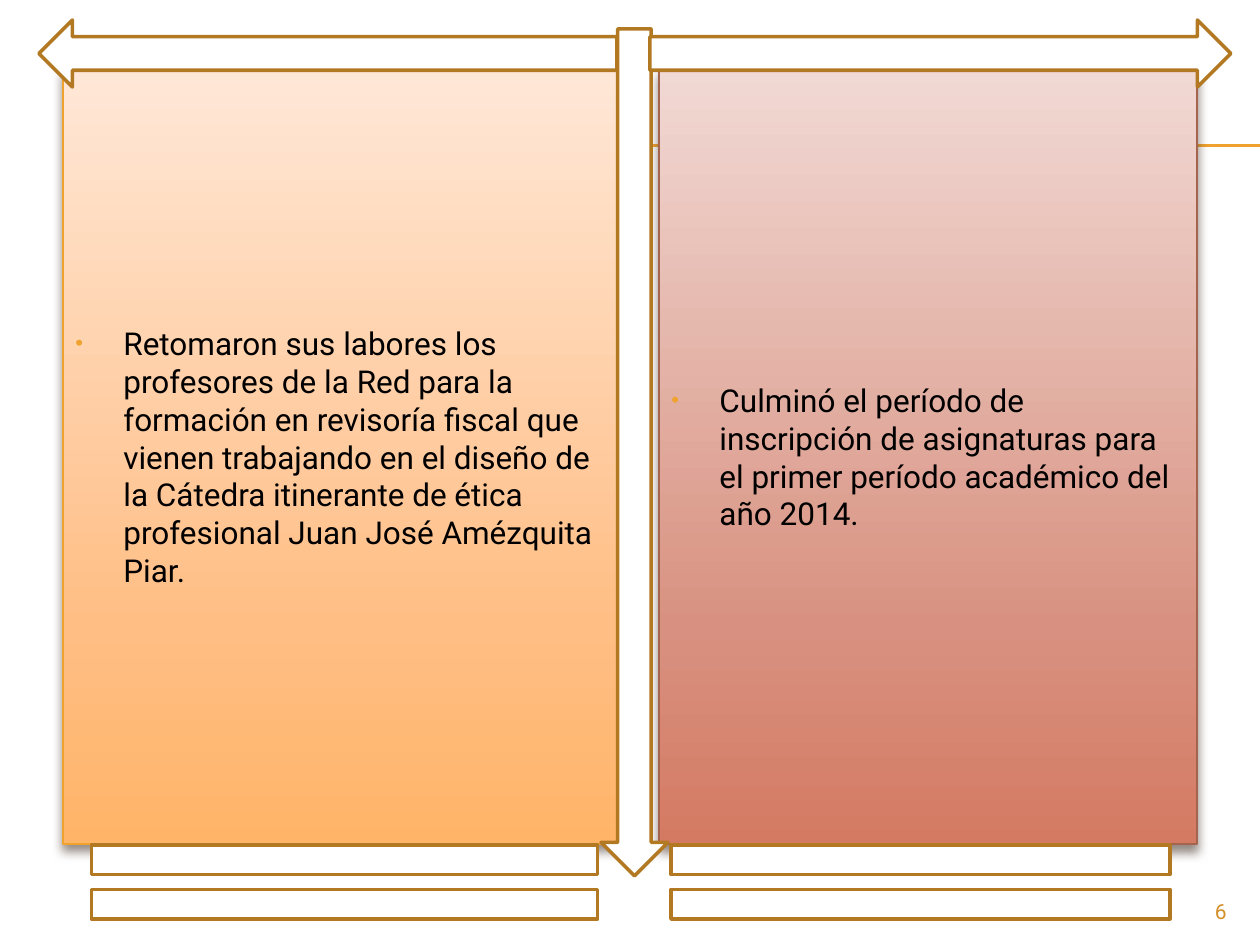
from lxml.etree import SubElement
from pptx import Presentation
from pptx.dml.color import RGBColor
from pptx.enum.shapes import MSO_CONNECTOR as Connector, MSO_SHAPE as Shape
from pptx.enum.text import MSO_ANCHOR as Anchor, PP_ALIGN as Align
from pptx.oxml import parse_xml
from pptx.oxml.ns import nsdecls, qn
from pptx.util import Emu, Pt

WIDTH, HEIGHT = 1260, 945
FONT = "Roboto"
GOLD, BROWN, WHITE, BLACK = "F0A22E", "B27822", "FFFFFF", "000000"
INDENT = 48

LEFT_TEXT = (
    "Retomaron sus labores los profesores de la Red para la formación en "
    "revisoría fiscal que vienen trabajando en el diseño de la Cátedra "
    "itinerante de ética profesional Juan José Amézquita Piar."
)
RIGHT_TEXT = (
    "Culminó el período de inscripción de asignaturas para el primer "
    "período académico del año 2014."
)


def px(value):
    return Emu(round(value * 914400 / 126))


def color(value):
    return RGBColor.from_string(value)


def add_shape(slide, kind, box, line, width):
    shape = slide.shapes.add_shape(kind, *map(px, box))
    shape.shadow.inherit = False
    shape.fill.solid()
    shape.fill.fore_color.rgb = color(WHITE)
    shape.line.color.rgb = color(line)
    shape.line.width = Pt(width)
    return shape


def add_run(paragraph, text, size, text_color):
    run = paragraph.add_run()
    run.text = text
    run.font.name = FONT
    run.font.size = Pt(size)
    run.font.color.rgb = color(text_color)


def set_gradient(shape, colors):
    stops = "".join(
        f'<a:gs pos="{position * 1000}"><a:srgbClr val="{value}"/></a:gs>'
        for position, value in zip((0, 72, 100), colors)
    )
    gradient = parse_xml(
        f'<a:gradFill {nsdecls("a")} rotWithShape="1"><a:gsLst>{stops}</a:gsLst>'
        '<a:lin ang="5400000" scaled="0"/></a:gradFill>'
    )
    properties = shape.element.spPr
    properties.replace(properties.find(qn("a:solidFill")), gradient)


def set_shadow(shape):
    effects = shape.element.spPr.find(qn("a:effectLst"))
    effects.append(parse_xml(
        f'<a:outerShdw {nsdecls("a")} blurRad="{Pt(6)}" dist="{Pt(4)}" '
        'dir="5400000" rotWithShape="0"><a:srgbClr val="4E3B30">'
        '<a:alpha val="60000"/></a:srgbClr></a:outerShdw>'
    ))


def set_bullet(paragraph):
    properties = paragraph._p.get_or_add_pPr()
    properties.set("marL", str(px(INDENT)))
    properties.set("indent", str(-px(INDENT)))
    bullet_color = SubElement(properties, qn("a:buClr"))
    SubElement(bullet_color, qn("a:srgbClr"), val=GOLD)
    SubElement(properties, qn("a:buSzPct"), val="70000")
    SubElement(properties, qn("a:buFont"), typeface="Arial")
    SubElement(properties, qn("a:buChar"), char="•")


def add_header_rule(slide, left, top, right):
    for y in (top, top + 1):
        line = slide.shapes.add_connector(
            Connector.STRAIGHT, px(left), px(y), px(right), px(y))
        line.line.color.rgb = color(GOLD)
        line.line.width = Pt(0.75)
        SubElement(line._element.spPr, qn("a:effectLst"))


def add_panel(slide, box, text, colors, border):
    panel = add_shape(slide, Shape.RECTANGLE, box, border, 0.79)
    set_gradient(panel, colors)
    set_shadow(panel)
    frame = panel.text_frame
    frame.word_wrap = True
    frame.vertical_anchor = Anchor.MIDDLE
    paragraph = frame.paragraphs[0]
    paragraph.alignment = Align.LEFT
    paragraph.space_before = Pt(3.6)
    set_bullet(paragraph)
    add_run(paragraph, text, 18, BLACK)


def add_frame(slide, left, top, width, height):
    parts = (
        (Shape.DOWN_ARROW, (562, 9, 67, 847)),
        (Shape.RIGHT_ARROW, (611, 0, 581, 67)),
        (Shape.LEFT_ARROW, (0, 0, 578, 67)),
        (Shape.MATH_EQUAL, (-left, height - 126, 689, 126)),
        (Shape.MATH_EQUAL, (542, height - 126, 679, 126)),
    )
    for kind, (x, y, part_width, part_height) in parts:
        add_shape(slide, kind, (left + x, top + y, part_width, part_height), BROWN, 2)


def add_slide_number(slide, box, number):
    frame = slide.shapes.add_textbox(*map(px, box)).text_frame
    frame.word_wrap = True
    paragraph = frame.paragraphs[0]
    paragraph.alignment = Align.RIGHT
    add_run(paragraph, number, 12, "D48F29")


def main():
    presentation = Presentation()
    presentation.slide_width = px(WIDTH)
    presentation.slide_height = px(HEIGHT)
    slide = presentation.slides.add_slide(presentation.slide_layouts[6])
    add_header_rule(slide, 71, 145, WIDTH)
    add_panel(slide, (63, 69, 557, 775), LEFT_TEXT,
              ("FFE7D7", "FFBE84", "FFB468"), GOLD)
    add_panel(slide, (659, 69, 538, 775), RIGHT_TEXT,
              ("F1D9D4", "D89180", "D47A62"), "A5644E")
    add_frame(slide, 39, 20, WIDTH - 39, HEIGHT - 20)
    add_slide_number(slide, (1134, 892, 105, 34), "6")
    presentation.save("out.pptx")


if __name__ == "__main__":
    main()
